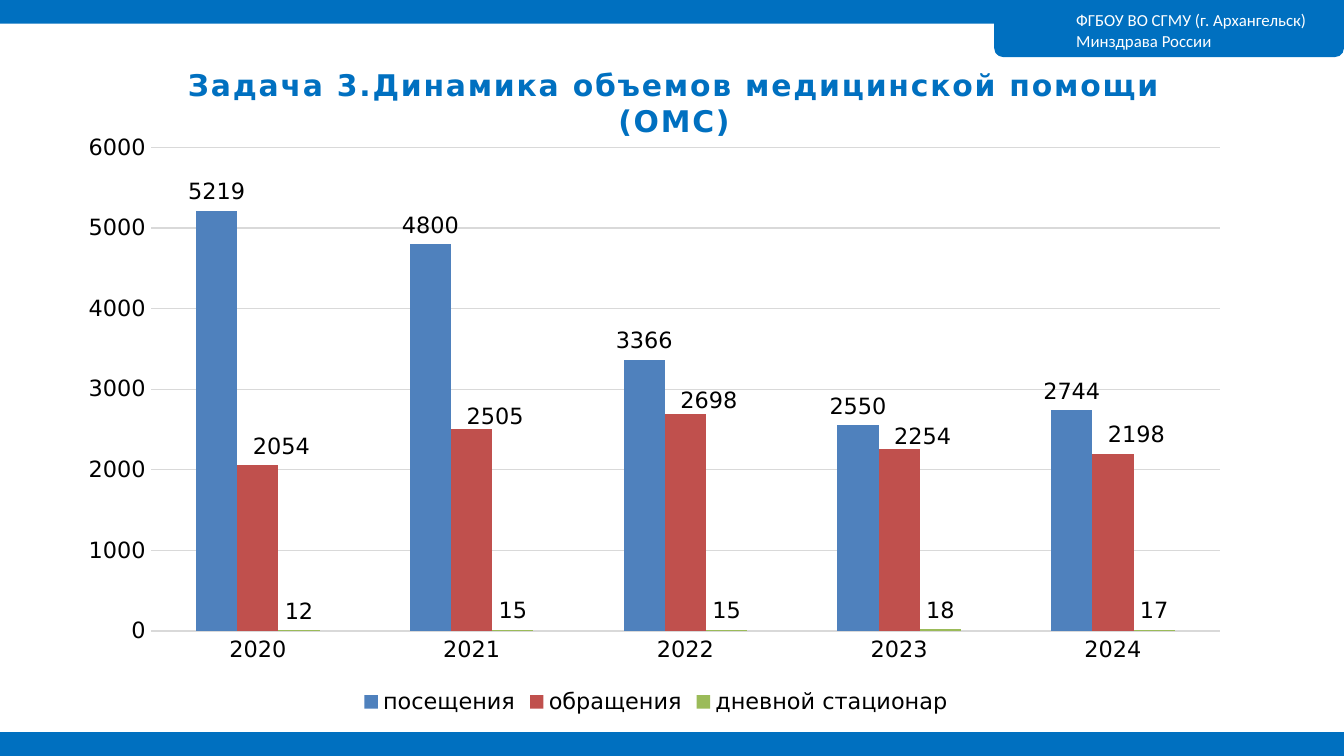
from pptx import Presentation
from pptx.chart.data import CategoryChartData
from pptx.dml.color import RGBColor
from pptx.enum.chart import XL_CHART_TYPE as ChartType
from pptx.enum.chart import XL_LABEL_POSITION as LabelPosition
from pptx.enum.chart import XL_LEGEND_POSITION as LegendPosition
from pptx.enum.chart import XL_TICK_MARK as TickMark
from pptx.enum.shapes import MSO_SHAPE as Shape
from pptx.enum.text import MSO_ANCHOR as Anchor
from pptx.enum.text import PP_ALIGN as Align
from pptx.oxml import parse_xml
from pptx.oxml.ns import nsdecls
from pptx.util import Cm, Pt

COLORS = {
    "brand": "0070C0",
    "white": "FFFFFF",
    "black": "000000",
    "grid": "D9D9D9",
    "visits": "4F81BD",
    "requests": "C0504D",
    "day_care": "9BBB59",
}
YEARS = ["2020", "2021", "2022", "2023", "2024"]
SERIES = [
    ("посещения", [5219, 4800, 3366, 2550, 2744], "visits"),
    ("обращения", [2054, 2505, 2698, 2254, 2198], "requests"),
    ("дневной стационар", [12, 15, 15, 18, 17], "day_care"),
]
REQUEST_LABEL_SHIFTS = [(0.02, 0), (0.02, 0.01), (0.02, 0.01), (0.02, 0.01), (0.02, 0)]
SLIDE_WIDTH, SLIDE_HEIGHT = 25.4, 14.29
BAND_HEIGHT = 0.45


def color(name):
    return RGBColor.from_string(COLORS[name])


def style_font(font, name, size, color_name, bold=False):
    font.name = name
    font.size = Pt(size)
    font.bold = bold
    font.color.rgb = color(color_name)


def add_block(slide, kind, left, top, width, height):
    shape = slide.shapes.add_shape(kind, Cm(left), Cm(top), Cm(width), Cm(height))
    shape.shadow.inherit = False
    shape.fill.solid()
    shape.fill.fore_color.rgb = color("brand")
    shape.line.fill.background()
    return shape


def add_organization(slide):
    shape = add_block(slide, Shape.ROUNDED_RECTANGLE, 18.79, 0.07, 6.61, 1.01)
    text_frame = shape.text_frame
    text_frame.word_wrap = True
    text_frame.vertical_anchor = Anchor.MIDDLE
    text_frame.text = "ФГБОУ ВО СГМУ (г. Архангельск) Минздрава России"
    paragraph = text_frame.paragraphs[0]
    paragraph.alignment = Align.LEFT
    paragraph._p.get_or_add_pPr().set("marL", str(Cm(1.25)))
    style_font(paragraph.runs[0].font, "Calibri", 9, "white")


def add_title(slide):
    text_box = slide.shapes.add_textbox(Cm(1.5), Cm(1.14), Cm(22.48), Cm(1.62))
    text_frame = text_box.text_frame
    text_frame.word_wrap = True
    text_frame.text = "Задача 3.Динамика объемов медицинской помощи\n(ОМС)"
    for paragraph in text_frame.paragraphs:
        paragraph.alignment = Align.CENTER
        run = paragraph.runs[0]
        style_font(run.font, "DejaVu Sans", 16, "brand", bold=True)
        run._r.get_or_add_rPr().set("spc", "100")


def layout_xml(**values):
    items = "".join(f'<c:{tag} val="{value}"/>' for tag, value in values.items())
    return parse_xml(
        f'<c:layout {nsdecls("c")}><c:manualLayout>{items}</c:manualLayout></c:layout>'
    )


def style_line(line, color_name):
    line.color.rgb = color(color_name)
    line.width = Pt(0.75)


def style_axes(chart):
    category_axis, value_axis = chart.category_axis, chart.value_axis
    for axis in (category_axis, value_axis):
        axis.major_tick_mark = axis.minor_tick_mark = TickMark.NONE
    style_line(category_axis.format.line, "grid")
    value_axis.format.line.fill.background()
    value_axis.has_major_gridlines = True
    style_line(value_axis.major_gridlines.format.line, "grid")
    value_axis.minimum_scale = 0
    value_axis.maximum_scale = 6000
    value_axis.major_unit = 1000


def style_series(series, color_name):
    series.format.fill.solid()
    series.format.fill.fore_color.rgb = color(color_name)
    series.data_labels.show_value = True
    series.data_labels.position = LabelPosition.OUTSIDE_END


def shift_labels(series, shifts):
    for index in range(len(shifts)):
        series.points[index].data_label.position = LabelPosition.OUTSIDE_END
    label_indexes = series._element.xpath("c:dLbls/c:dLbl/c:idx")
    for label_index, (x, y) in zip(label_indexes, shifts):
        label_index.addnext(layout_xml(x=x, y=y))


def place_plot(chart):
    chart_element = chart._chartSpace.chart
    plot_area = chart_element.plotArea
    for layout in plot_area.xpath("c:layout"):
        plot_area.remove(layout)
    plot_area.insert(0, layout_xml(
        layoutTarget="inner", xMode="edge", yMode="edge",
        x=0.07, y=0.04, w=0.91, h=0.81,
    ))
    chart_element.addnext(parse_xml(
        f'<c:spPr {nsdecls("c", "a")}><a:noFill/><a:ln><a:noFill/></a:ln></c:spPr>'
    ))


def add_volume_chart(slide):
    data = CategoryChartData()
    data.categories = YEARS
    for name, values, _ in SERIES:
        data.add_series(name, values)
    frame = slide.shapes.add_chart(
        ChartType.COLUMN_CLUSTERED, Cm(1.3), Cm(2.34), Cm(22.2), Cm(11.28), data
    )
    chart = frame.chart
    chart.has_title = False
    style_font(chart.font, "DejaVu Sans", 12, "black")
    chart.has_legend = True
    chart.legend.position = LegendPosition.BOTTOM
    chart.legend.include_in_layout = False
    plot = chart.plots[0]
    plot.gap_width = 219
    plot.vary_by_categories = False
    style_axes(chart)
    for series, (_, _, color_name) in zip(plot.series, SERIES):
        style_series(series, color_name)
    shift_labels(plot.series[1], REQUEST_LABEL_SHIFTS)
    place_plot(chart)


def main():
    presentation = Presentation()
    presentation.slide_width = Cm(SLIDE_WIDTH)
    presentation.slide_height = Cm(SLIDE_HEIGHT)
    slide = presentation.slides.add_slide(presentation.slide_layouts[6])
    for top in (0, SLIDE_HEIGHT - BAND_HEIGHT):
        add_block(slide, Shape.RECTANGLE, 0, top, SLIDE_WIDTH, BAND_HEIGHT)
    add_organization(slide)
    add_title(slide)
    add_volume_chart(slide)
    presentation.save("out.pptx")


if __name__ == "__main__":
    main()
